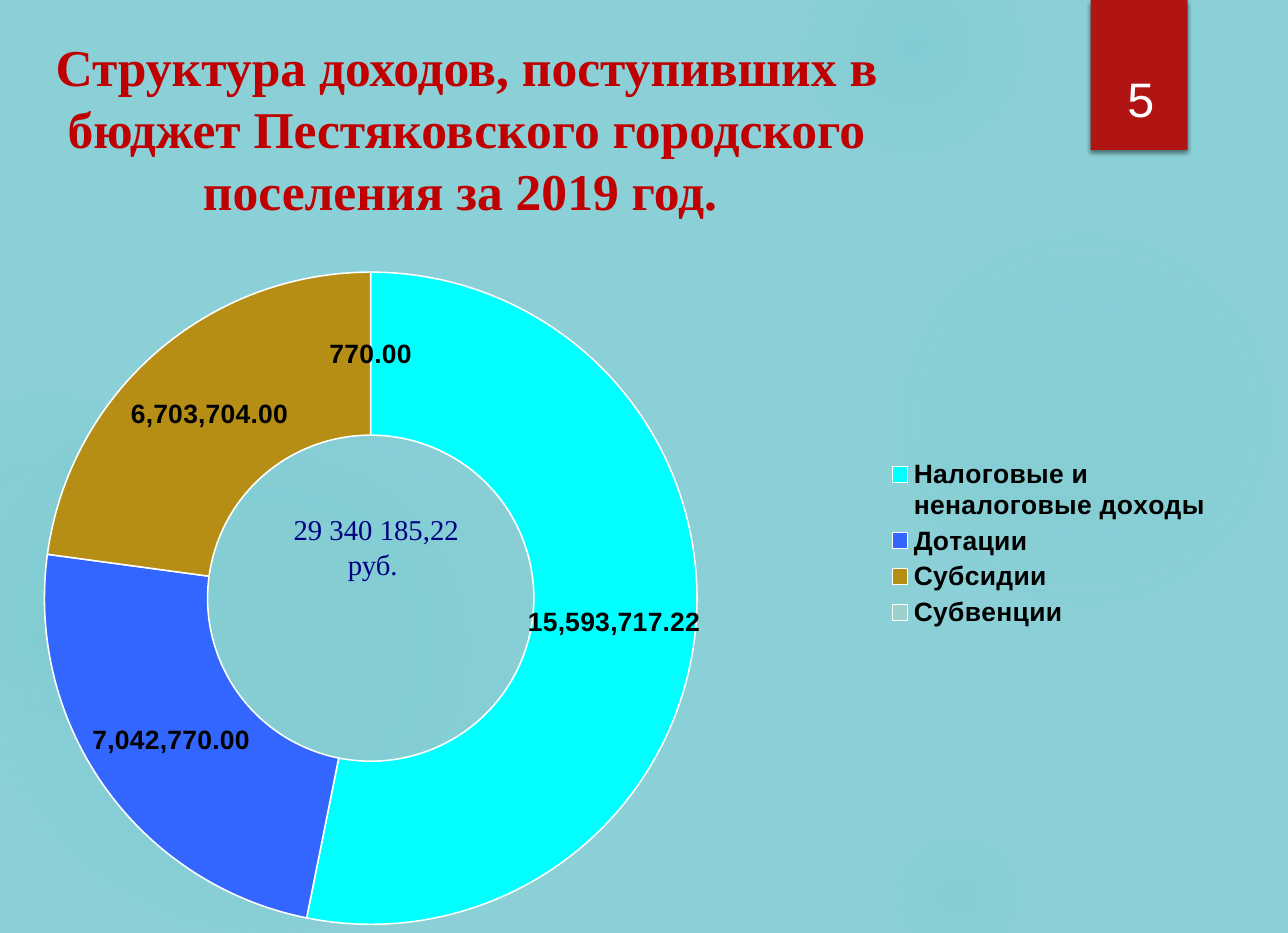
from pptx import Presentation
from pptx.chart.data import CategoryChartData
from pptx.dml.color import RGBColor
from pptx.enum.chart import XL_CHART_TYPE, XL_LEGEND_POSITION
from pptx.enum.shapes import MSO_SHAPE
from pptx.enum.text import MSO_ANCHOR, PP_ALIGN
from pptx.oxml import parse_xml
from pptx.oxml.ns import nsdecls, qn
from pptx.util import Inches, Pt

COLORS = {
    "background": "8AD0D6", "glow": "50B9C1", "red": "B01513",
    "title": "C00000", "total": "000080", "white": "FFFFFF", "black": "000000",
    "taxes": "00FFFF", "grants": "3366FF", "subsidies": "B68E15", "subventions": "9DD0CB",
}


def color(name):
    return RGBColor.from_string(COLORS[name])


def write(shape, lines, anchor, wrap, font_values, font_color):
    frame = shape.text_frame
    margins = {"margin_left": 0.1, "margin_right": 0.1, "margin_top": 0.05, "margin_bottom": 0.05}
    for name, value in margins.items():
        setattr(frame, name, Inches(value))
    frame.vertical_anchor = anchor
    frame.word_wrap = wrap
    for index, line in enumerate(lines):
        para = frame.paragraphs[0] if index == 0 else frame.add_paragraph()
        para.alignment = PP_ALIGN.CENTER
        span = para.add_run()
        span.text = line
        for name, value in font_values.items():
            setattr(span.font, name, value)
        span.font.color.rgb = color(font_color)


deck = Presentation()
deck.slide_width, deck.slide_height = Inches(11.42), Inches(8.27)
slide = deck.slides.add_slide(deck.slide_layouts[6])
slide.background.fill.solid()
slide.background.fill.fore_color.rgb = color("background")

# Soft background glows: left, top, width, height, then (position, opacity) stops in percent
glows = [
    (7.87, 2.02, 3.52, 3.4, [(0, 7), (36, 6), (69, 0)]),
    (7.1, -0.55, 2, 1.93, [(0, 14), (36, 7), (73, 0)]),
    (7.87, 7.35, 1.24, 1.19, [(0, 9), (36, 5), (66, 0)]),
    (-0.19, 3.22, 5.23, 5.05, [(0, 11), (36, 10), (75, 0)]),
    (-1.05, 3.49, 2.95, 2.85, [(0, 8), (36, 8), (72, 0)]),
]
for *bounds, stops in glows:
    glow = slide.shapes.add_shape(MSO_SHAPE.OVAL, *map(Inches, bounds))
    glow.shadow.inherit = False
    glow.line.fill.background()
    stop_xml = "".join(
        f'<a:gs pos="{position * 1000}"><a:srgbClr val="{COLORS["glow"]}">'
        f'<a:alpha val="{opacity * 1000}"/></a:srgbClr></a:gs>'
        for position, opacity in stops
    )
    gradient = parse_xml(
        f'<a:gradFill {nsdecls("a")}><a:gsLst>{stop_xml}</a:gsLst><a:path path="circle">'
        '<a:fillToRect l="50000" t="50000" r="50000" b="50000"/></a:path></a:gradFill>'
    )
    glow._element.spPr.find(qn("a:prstGeom")).addnext(gradient)

# Red page-number tab, with a shadow under the ribbon
ribbon, number = [
    slide.shapes.add_shape(MSO_SHAPE.RECTANGLE, *map(Inches, bounds))
    for bounds in [(9.67, 0, 0.86, 1.33), (9.75, 0.72, 0.73, 0.46)]
]
for tab in (ribbon, number):
    tab.shadow.inherit = False
    tab.fill.solid()
    tab.fill.fore_color.rgb = color("red")
    tab.line.fill.background()
ribbon._element.spPr.find(qn("a:effectLst")).append(parse_xml(
    f'<a:outerShdw {nsdecls("a")} blurRad="{Pt(3)}" dist="{Pt(2)}" dir="5400000">'
    f'<a:srgbClr val="{COLORS["black"]}"><a:alpha val="45000"/></a:srgbClr></a:outerShdw>'
))
write(number, ["5"], MSO_ANCHOR.BOTTOM, True, {"size": Pt(30.9), "name": "Arial"}, "white")

# Income doughnut
incomes = [
    ("Налоговые и неналоговые доходы", 15593717.22, "taxes"),
    ("Дотации ", 7042770, "grants"),
    ("Субсидии", 6703704, "subsidies"),
    ("Субвенции ", 770, "subventions"),
]
data = CategoryChartData(number_format="#,##0.00")
data.categories = [income[0] for income in incomes]
data.add_series("Series 1", [income[1] for income in incomes])
chart = slide.shapes.add_chart(
    XL_CHART_TYPE.DOUGHNUT, Inches(0.31), Inches(1.44), Inches(10.54), Inches(6.76), data
).chart
chart.has_title = False
chart.has_legend = True
chart.legend.position = XL_LEGEND_POSITION.RIGHT
chart.legend.include_in_layout = False
plot = chart.plots[0]
plot.vary_by_categories = True
plot.has_data_labels = True
labels = plot.data_labels
label_values = {"show_value": True, "show_percentage": False, "show_category_name": False,
                "number_format": "#,##0.00", "number_format_is_linked": False}
for name, value in label_values.items():
    setattr(labels, name, value)
for font in (chart.font, chart.legend.font, labels.font):
    for name, value in {"size": Pt(16.9), "name": "Arial", "bold": True}.items():
        setattr(font, name, value)
    font.color.rgb = color("black")
for index, income in enumerate(incomes):
    sector = plot.series[0].points[index].format
    sector.fill.solid()
    sector.fill.fore_color.rgb = color(income[2])
    sector.line.color.rgb = color("white")
    sector.line.width = Pt(1)

# Ring placement and hole size
plot_area = chart._chartSpace.chart.plotArea
for old_layout in plot_area.findall(qn("c:layout")):
    plot_area.remove(old_layout)
fractions = {"x": 0.008, "y": 0.144, "w": 0.549, "h": 0.856}
plot_area.insert(0, parse_xml(
    f'<c:layout {nsdecls("c")}><c:manualLayout><c:layoutTarget val="inner"/>'
    '<c:xMode val="edge"/><c:yMode val="edge"/>'
    + "".join(f'<c:{side} val="{value}"/>' for side, value in fractions.items())
    + "</c:manualLayout></c:layout>"
))
plot_area.find(".//" + qn("c:holeSize")).set("val", "50")

# Title
title = slide.shapes.add_textbox(Inches(0), Inches(0.26), Inches(8.27), Inches(1.63))
write(title, ["Структура доходов, поступивших в бюджет Пестяковского городского поселения за 2019 год. "],
      MSO_ANCHOR.TOP, True, {"size": Pt(32.9), "name": "Times New Roman", "bold": True}, "title")

# Total inside the ring
total = slide.shapes.add_textbox(Inches(2.32), Inches(4.49), Inches(1.97), Inches(1.14))
write(total, [" 29 340 185,22", "руб."], MSO_ANCHOR.TOP, False,
      {"size": Pt(18.3), "name": "Times New Roman"}, "total")

deck.save("out.pptx")
